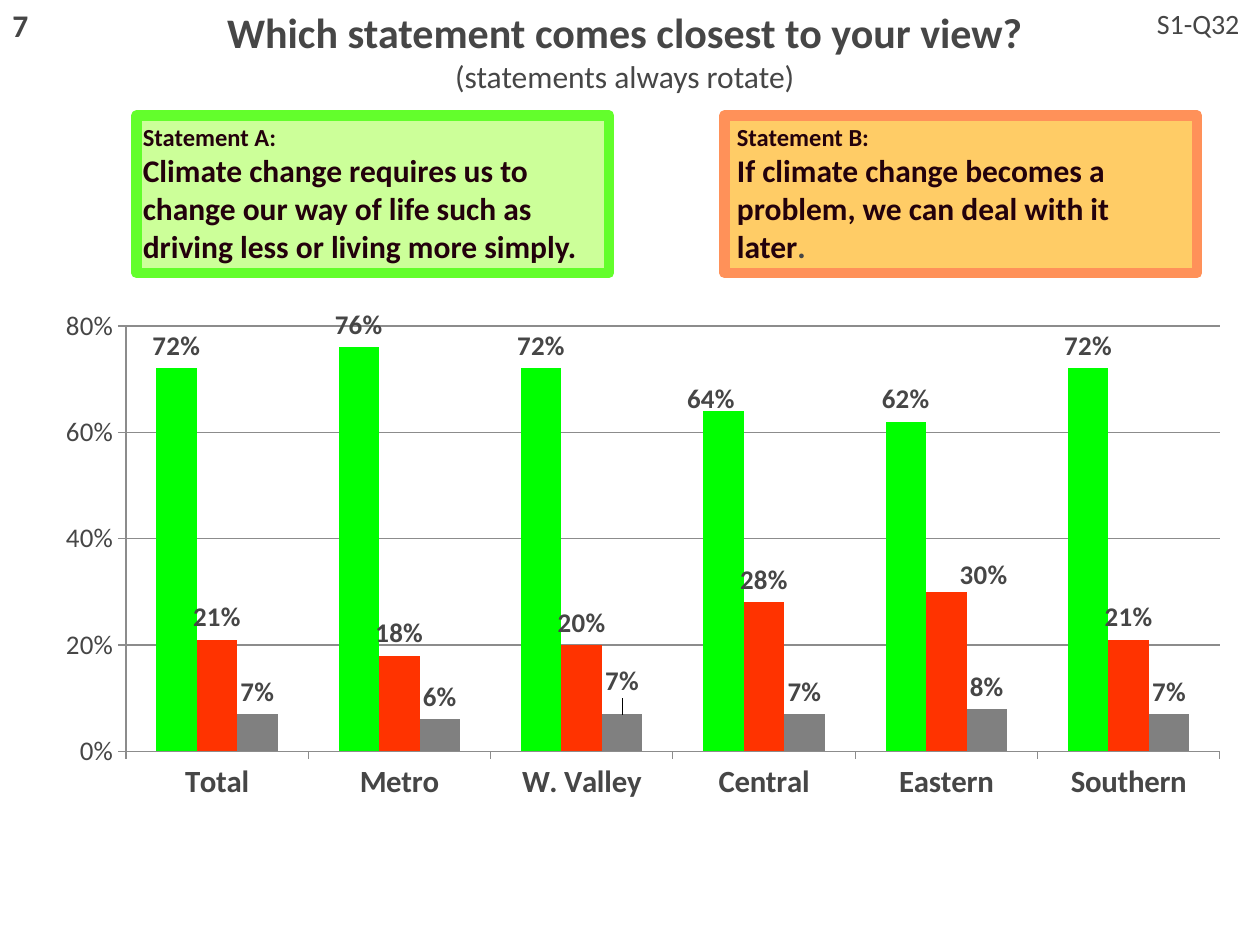
from lxml import etree
from pptx import Presentation
from pptx.chart.data import CategoryChartData
from pptx.dml.color import RGBColor
from pptx.enum.chart import XL_CHART_TYPE, XL_LABEL_POSITION, XL_TICK_MARK
from pptx.enum.shapes import MSO_SHAPE
from pptx.enum.text import MSO_ANCHOR, MSO_AUTO_SIZE, PP_ALIGN
from pptx.oxml.ns import qn
from pptx.util import Pt

COLUMNS = XL_CHART_TYPE.COLUMN_CLUSTERED
OUTSIDE_END = XL_LABEL_POSITION.OUTSIDE_END
TICK_OUTSIDE = XL_TICK_MARK.OUTSIDE
RECTANGLE = MSO_SHAPE.RECTANGLE
TOP = MSO_ANCHOR.TOP
NO_AUTOFIT = MSO_AUTO_SIZE.NONE
LEFT, CENTER = PP_ALIGN.LEFT, PP_ALIGN.CENTER

FONT = "Calibri"
COLORS = {
    "text": "464646", "statement": "23010C", "grid": "8C8C8C",
    "a_fill": "CCFF99", "a_line": "63FE2C",
    "b_fill": "FFCC66", "b_line": "FF9159",
    "agree_a": "00FF00", "agree_b": "FF3300", "unsure": "808080",
}
REGIONS = ["Total", "Metro", "W. Valley", "Central", "Eastern", "Southern"]
# name, colour, values, {point index: label shift as a share of the chart}
SERIES = [
    ("Series 1", "agree_a", [0.72, 0.76, 0.72, 0.64, 0.62, 0.72], {3: (-0.01, 0.02)}),
    ("Series 2", "agree_b", [0.21, 0.18, 0.2, 0.28, 0.3, 0.21], {4: (0.03, 0.01)}),
    ("Series 3", "unsure", [0.07, 0.06, 0.07, 0.07, 0.08, 0.07], {2: (0, -0.02)}),
]


def rgb(name):
    return RGBColor.from_string(COLORS[name])


def style_font(font, size, bold=False, color="text"):
    font.name = FONT
    font.size = Pt(size)
    font.bold = bold
    font.color.rgb = rgb(color)


def add_run(paragraph, text, size, bold=False, color="text"):
    run = paragraph.add_run()
    run.text = text
    style_font(run.font, size, bold, color)


def place(shape, box):
    shape.left, shape.top, shape.width, shape.height = map(Pt, box)


def prepare_frame(shape):
    frame = shape.text_frame
    frame.word_wrap = True
    frame.auto_size = NO_AUTOFIT
    frame.vertical_anchor = TOP
    return frame


def add_title(slide, box):
    title = slide.shapes.title
    place(title, box)
    frame = prepare_frame(title)
    heading, note = frame.paragraphs[0], frame.add_paragraph()
    heading.alignment = note.alignment = CENTER
    add_run(heading, "Which statement comes closest to your view?", 24, True)
    add_run(note, "(statements always rotate)", 18)


def add_label(slide, box, text, size, bold=False):
    frame = prepare_frame(slide.shapes.add_textbox(*map(Pt, box)))
    add_run(frame.paragraphs[0], text, size, bold)


def add_statement(slide, box, key, heading, runs, inset=None):
    shape = slide.shapes.add_shape(RECTANGLE, *map(Pt, box))
    shape.shadow.inherit = False
    shape.fill.solid()
    shape.fill.fore_color.rgb = rgb(key + "_fill")
    shape.line.color.rgb = rgb(key + "_line")
    shape.line.width = Pt(6)
    frame = prepare_frame(shape)
    if inset is not None:
        frame.margin_left = frame.margin_right = Pt(inset)
        frame.margin_top = frame.margin_bottom = Pt(inset)
    first, second = frame.paragraphs[0], frame.add_paragraph()
    first.alignment = second.alignment = LEFT
    add_run(first, heading, 14, True, "statement")
    for text, color in runs:
        add_run(second, text, 18, True, color)


def manual_layout(**values):
    """Build a c:layout element from its child names and values."""
    layout = etree.Element(qn("c:layout"))
    manual = etree.SubElement(layout, qn("c:manualLayout"))
    for name, value in values.items():
        etree.SubElement(manual, qn("c:" + name)).set("val", str(value))
    return layout


def style_series(series, color, shifts):
    series.format.fill.solid()
    series.format.fill.fore_color.rgb = rgb(color)
    labels = series.data_labels
    labels.show_value = True
    labels.number_format = "0%"
    labels.number_format_is_linked = False
    labels.position = OUTSIDE_END
    style_font(labels.font, 15.4, True)
    for index, (x, y) in shifts.items():
        label = series.points[index].data_label
        style_font(label.font, 15.4, True)
        label.position = OUTSIDE_END
        element = series._element.xpath(f"c:dLbls/c:dLbl[c:idx/@val='{index}']")[0]
        element.insert(1, manual_layout(x=x, y=y))


def style_axes(chart):
    values, categories = chart.value_axis, chart.category_axis
    values.minimum_scale, values.maximum_scale = 0, 0.8
    values.major_unit = 0.2
    values.has_major_gridlines = True
    values.major_gridlines.format.line.color.rgb = rgb("grid")
    values.tick_labels.number_format = "0%"
    values.tick_labels.number_format_is_linked = False
    style_font(values.tick_labels.font, 15.4)
    style_font(categories.tick_labels.font, 17.6, True)
    for axis in (values, categories):
        axis.major_tick_mark = TICK_OUTSIDE
        axis.format.line.color.rgb = rgb("grid")


def add_results_chart(slide, box):
    data = CategoryChartData(number_format="0%")
    data.categories = REGIONS
    for name, _, values, _ in SERIES:
        data.add_series(name, values)
    chart = slide.shapes.add_chart(COLUMNS, *map(Pt, box), data).chart
    chart.has_legend = chart.has_title = False
    style_font(chart.font, 19.8)
    plot = chart.plots[0]
    plot.gap_width, plot.overlap = 150, 0
    plot.vary_by_categories = False
    for series, (_, color, _, shifts) in zip(plot.series, SERIES):
        style_series(series, color, shifts)
    style_axes(chart)

    plot_area = chart._chartSpace.chart.plotArea
    for layout in plot_area.findall(qn("c:layout")):
        plot_area.remove(layout)
    plot_area.insert(0, manual_layout(
        layoutTarget="inner", xMode="edge", yMode="edge", x=0.095, y=0.047, w=0.878, h=0.8))


def main():
    presentation = Presentation()
    presentation.slide_width, presentation.slide_height = Pt(720), Pt(540)
    slide = presentation.slides.add_slide(presentation.slide_layouts[5])
    add_results_chart(slide, (4.3, 172, 712, 304))
    add_statement(slide, (414, 66, 270, 90), "b", "Statement B:", [
        ("If climate change becomes a problem, we can deal with it later", "statement"),
        (".", "text")])
    add_statement(slide, (78, 66, 270, 90), "a", "Statement A:", [
        ("Climate change requires us to change our way of life such as "
         "driving less or living more simply.", "statement")], inset=3.6)
    add_title(slide, (60, 0, 594, 65.5))
    add_label(slide, (654, 0, 66, 26.6), "S1-Q32", 16)
    add_label(slide, (0, 0, 34.6, 28.8), "7", 18, True)
    presentation.save("out.pptx")


if __name__ == "__main__":
    main()
